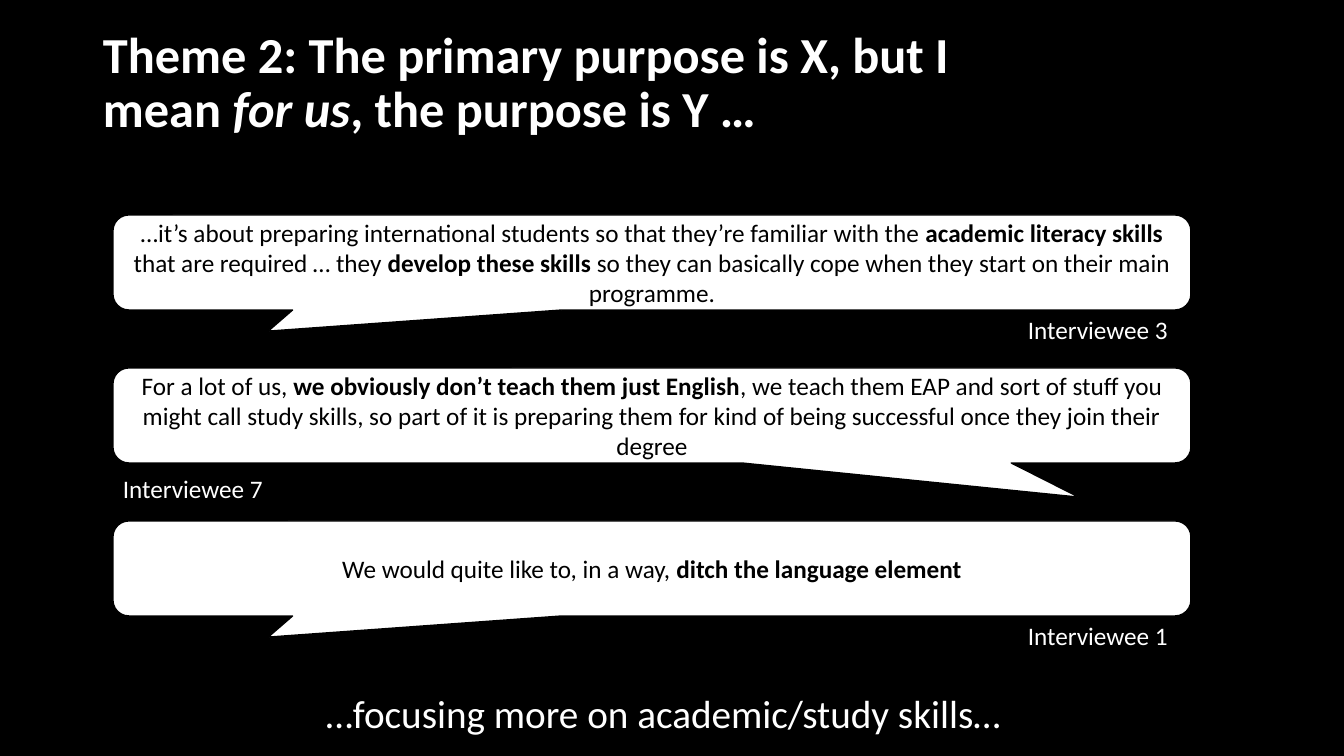
from pptx import Presentation
from pptx.dml.color import RGBColor
from pptx.enum.shapes import MSO_SHAPE
from pptx.enum.text import MSO_ANCHOR, PP_ALIGN
from pptx.util import Emu, Pt

BLACK = RGBColor(0x00, 0x00, 0x00)
WHITE = RGBColor(0xFF, 0xFF, 0xFF)

EMU_PER_PX = 914400 / 100.8
CALLOUT_PITCH = 153

TITLE_FORMAT = {"size": Pt(36), "name": "Calibri", "bold": True}
BODY_FORMAT = {"size": Pt(18), "name": "Calibri"}
CLOSING_FORMAT = {"size": Pt(28), "name": "Calibri"}

TITLE = [
    ("Theme 2: The primary purpose is X, but I mean ", {}),
    ("for us", {"italic": True}),
    (", the purpose is Y …", {}),
]
BOLD = {"bold": True}
LEFT_TAIL = (-0.356, 0.723, 0.167)
RIGHT_TAIL = (0.396, 0.86, 0.167)
LABEL_RIGHT = (905, 94)
LABEL_LEFT = (0, 100)
QUOTES = [
    ("Interviewee 3", LABEL_RIGHT, LEFT_TAIL, [
        ("…it’s about preparing international students so that they’re familiar with the ", {}),
        ("academic literacy skills ", BOLD),
        ("that are required … they ", {}),
        ("develop these skills ", BOLD),
        ("so they can basically cope when they start on their main programme.", {}),
    ]),
    ("Interviewee 7", LABEL_LEFT, RIGHT_TAIL, [
        ("For a lot of us, ", {}),
        ("we obviously don’t teach them just English", BOLD),
        (", we teach them EAP and sort of stuff you might call study skills, so part of it is "
         "preparing them for kind of being successful once they join their degree", {}),
    ]),
    ("Interviewee 1", LABEL_RIGHT, LEFT_TAIL, [
        ("We would quite like to, in a way, ", {}),
        ("ditch the language element", BOLD),
    ]),
]


def px(length):
    """Turn a length in px into EMU."""
    return Emu(round(length * EMU_PER_PX))


def write_runs(paragraph, runs, text_format, color):
    """Add formatted runs to a paragraph."""
    for text, changes in runs:
        run = paragraph.add_run()
        run.text = text
        for attribute, value in {**text_format, **changes}.items():
            setattr(run.font, attribute, value)
        run.font.color.rgb = color


def add_text(slide, box, runs, text_format, wrap=False):
    """Place a white text box and return its text frame."""
    frame = slide.shapes.add_textbox(*map(px, box)).text_frame
    frame.word_wrap = wrap
    write_runs(frame.paragraphs[0], runs, text_format, WHITE)
    return frame


def add_title(slide, box):
    """Place the slide title, centred vertically in its box."""
    frame = add_text(slide, box, TITLE, TITLE_FORMAT, wrap=True)
    frame.vertical_anchor = MSO_ANCHOR.MIDDLE
    frame.paragraphs[0].line_spacing = 0.9


def add_quote(slide, box, speaker, label_offset, tail, runs):
    """Place a speech callout with its speaker label below."""
    callout = slide.shapes.add_shape(MSO_SHAPE.ROUNDED_RECTANGULAR_CALLOUT, *map(px, box))
    for index, value in enumerate(tail):
        callout.adjustments[index] = value
    callout.shadow.inherit = False
    callout.fill.solid()
    callout.fill.fore_color.rgb = WHITE
    callout.line.color.rgb = BLACK
    callout.line.width = Pt(1)
    frame = callout.text_frame
    frame.word_wrap = True
    frame.vertical_anchor = MSO_ANCHOR.MIDDLE
    frame.paragraphs[0].alignment = PP_ALIGN.CENTER
    write_runs(frame.paragraphs[0], runs, BODY_FORMAT, BLACK)

    left, top = box[:2]
    across, down = label_offset
    add_text(slide, (left + across, top + down, 162, 40), [(speaker, {})], BODY_FORMAT)


def add_quotes(slide, box):
    """Stack the quotes at an equal pitch from the first callout's box."""
    left, top, width, height = box
    for index, quote in enumerate(QUOTES):
        add_quote(slide, (left, top + index * CALLOUT_PITCH, width, height), *quote)


def main():
    """Build and save the slide."""
    presentation = Presentation()
    presentation.slide_width = px(1344)
    presentation.slide_height = px(756)
    slide = presentation.slides.add_slide(presentation.slide_layouts[6])
    slide.background.fill.solid()
    slide.background.fill.fore_color.rgb = BLACK
    add_title(slide, (93, 11, 993, 146))
    add_quotes(slide, (113, 215, 1078, 95))
    add_text(slide, (316, 684, 712, 57),
             [("…focusing more on academic/study skills…", {})], CLOSING_FORMAT)
    presentation.save("out.pptx")


if __name__ == "__main__":
    main()
